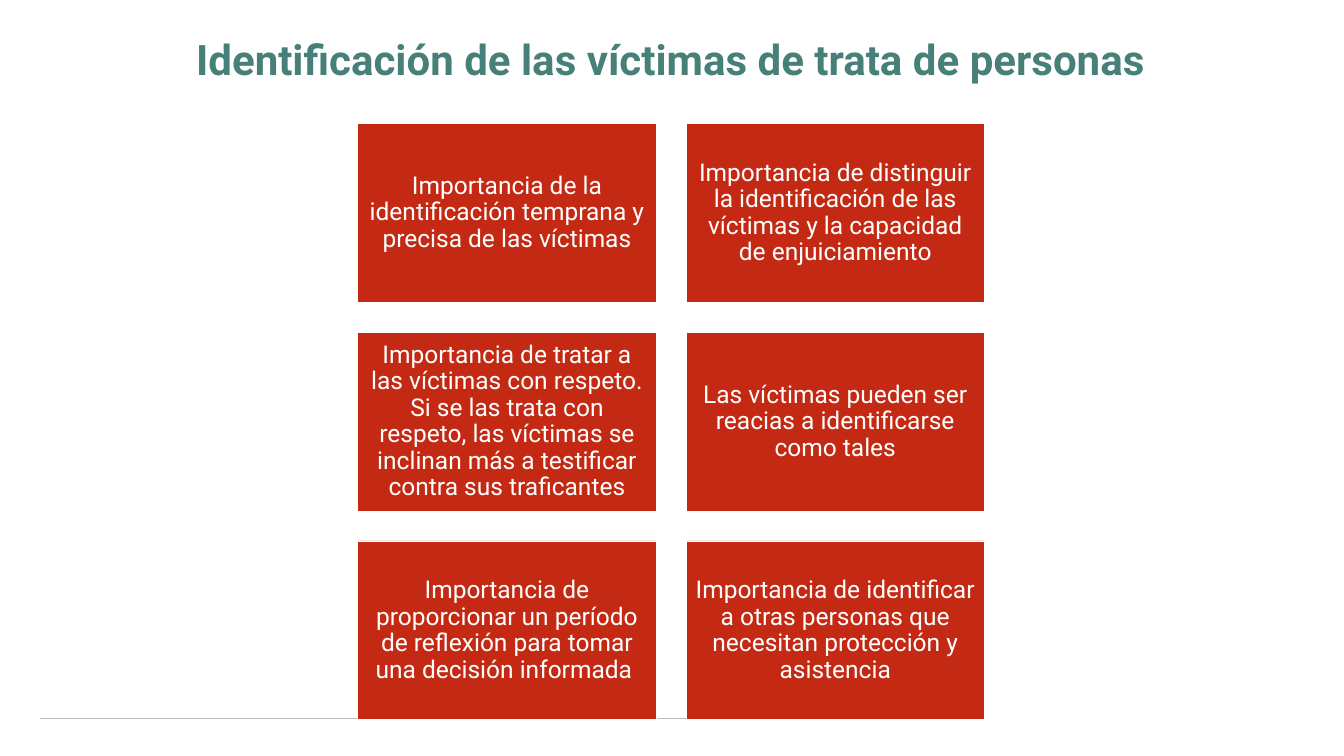
from dataclasses import dataclass

import pptx
import pptx.dml.color
import pptx.enum.shapes
import pptx.enum.text
import pptx.util
from lxml import etree
from pptx.util import Cm


@dataclass(frozen=True)
class Theme:
    font: str = "Roboto"
    heading: str = "468078"
    card: str = "C42A13"
    white: str = "FFFFFF"
    rule: str = "BFBFBF"
    heading_size: int = 60
    card_size: int = 35


THEME = Theme()
HEADING = "Identificación de las víctimas de trata de personas"
CARDS = [
    "Importancia de la identificación temprana y precisa de las víctimas",
    "Importancia de distinguir la identificación de las víctimas y la capacidad de enjuiciamiento",
    "Importancia de tratar a las víctimas con respeto. Si se las trata con respeto, "
    "las víctimas se inclinan más a testificar contra sus traficantes",
    "Las víctimas pueden ser reacias a identificarse como tales",
    "Importancia de proporcionar un período de reflexión para tomar una decisión informada ",
    "Importancia de identificar a otras personas que necesitan protección y asistencia",
]


def rgb(value):
    return pptx.dml.color.RGBColor.from_string(value)


def write(shape, text, *, size, color, bold=False, inset_x=0.38, inset_y=0.38):
    frame = shape.text_frame
    frame.word_wrap = True
    frame.auto_size = pptx.enum.text.MSO_AUTO_SIZE.NONE
    frame.vertical_anchor = pptx.enum.text.MSO_ANCHOR.MIDDLE
    frame.margin_left = frame.margin_right = Cm(inset_x)
    frame.margin_top = frame.margin_bottom = Cm(inset_y)
    paragraph = frame.paragraphs[0]
    paragraph.alignment = pptx.enum.text.PP_ALIGN.CENTER
    paragraph.line_spacing = 0.9
    run = paragraph.add_run()
    run.text = text
    run.font.name = THEME.font
    run.font.size = pptx.util.Pt(size)
    run.font.bold = bold
    run.font.color.rgb = rgb(color)


def add_footer_rule(slide, left, top, width):
    rule = slide.shapes.add_connector(
        pptx.enum.shapes.MSO_CONNECTOR.STRAIGHT, Cm(left), Cm(top), Cm(left + width), Cm(top)
    )
    rule.line.color.rgb = rgb(THEME.rule)
    rule.line.width = pptx.util.Pt(2.25)
    etree.SubElement(rule._element.spPr, pptx.oxml.ns.qn("a:effectLst"))


def add_heading(slide, left, top, width, height):
    heading = slide.shapes.add_textbox(Cm(left), Cm(top), Cm(width), Cm(height))
    write(heading, HEADING, size=THEME.heading_size, color=THEME.heading,
          bold=True, inset_x=0.51, inset_y=0.25)


def add_card_grid(slide, left, top, width, height, columns=2, gap=1.5):
    rows = len(CARDS) // columns
    card_width = (width - gap * (columns - 1)) / columns
    card_height = (height - gap * (rows - 1)) / rows
    for index, text in enumerate(CARDS):
        row, column = divmod(index, columns)
        card = slide.shapes.add_shape(
            pptx.enum.shapes.MSO_SHAPE.RECTANGLE,
            Cm(left + column * (card_width + gap)),
            Cm(top + row * (card_height + gap)),
            Cm(card_width),
            Cm(card_height),
        )
        card.shadow.inherit = False
        card.fill.solid()
        card.fill.fore_color.rgb = rgb(THEME.card)
        card.line.color.rgb = rgb(THEME.white)
        card.line.width = pptx.util.Pt(1)
        write(card, text, size=THEME.card_size, color=THEME.white)


def main():
    deck = pptx.Presentation()
    deck.slide_width = Cm(67.72)
    deck.slide_height = Cm(38.1)
    slide = deck.slides.add_slide(deck.slide_layouts[6])
    slide.background.fill.solid()
    slide.background.fill.fore_color.rgb = rgb(THEME.white)
    add_footer_rule(slide, 2.03, 36.2, 45.92)
    add_heading(slide, 2.03, 1.4, 63.53, 3.4)
    add_card_grid(slide, 18.03, 6.22, 31.58, 30.06)
    deck.save("out.pptx")


if __name__ == "__main__":
    main()
